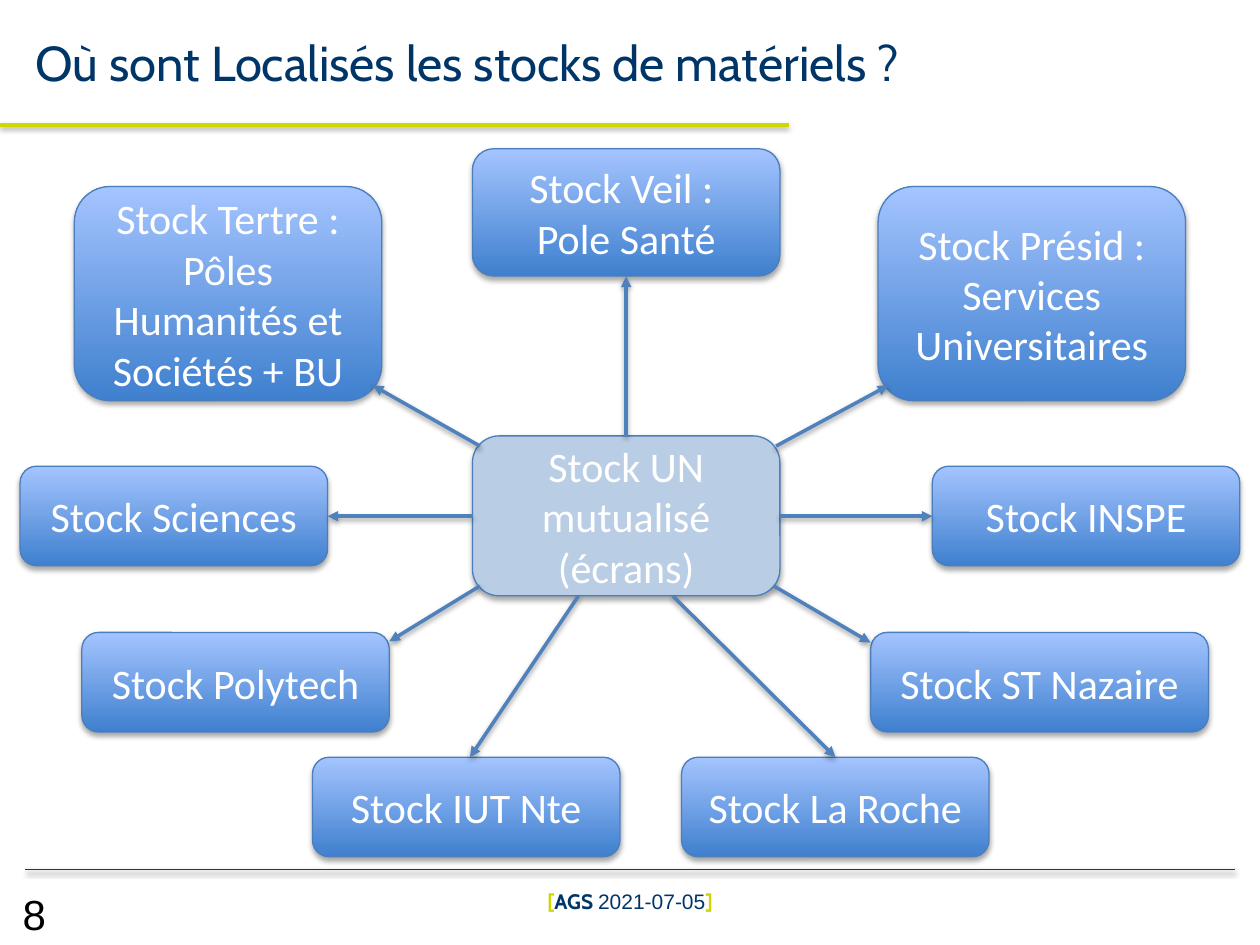
from typing import NamedTuple

from lxml import etree
from pptx import Presentation
from pptx.dml.color import RGBColor
from pptx.enum.shapes import MSO_CONNECTOR, MSO_SHAPE
from pptx.enum.text import MSO_ANCHOR, MSO_AUTO_SIZE, PP_ALIGN
from pptx.oxml.ns import qn
from pptx.util import Pt

ROUND = MSO_SHAPE.ROUNDED_RECTANGLE
LINE = MSO_CONNECTOR.STRAIGHT
TOP, MIDDLE = MSO_ANCHOR.TOP, MSO_ANCHOR.MIDDLE
LEFT, CENTER, JUSTIFY = PP_ALIGN.LEFT, PP_ALIGN.CENTER, PP_ALIGN.JUSTIFY
NO_FIT = MSO_AUTO_SIZE.NONE

NAVY, LIME, BLUE, EDGE = "003667", "D0D700", "4F81BD", "4B7EBC"
DARK, LIGHT, PALE = "3F80CE", "A4C4FF", "B9CDE5"
WIDE, LOW, TALL = 175.7, 56.9, 122.4


class Run(NamedTuple):
    text: str
    color: str
    font: str = "Cabin"
    bold: bool = False


class Stock(NamedTuple):
    name: str
    x: float
    y: float
    w: float = WIDE
    h: float = LOW
    fill: str = ""


class Arrow(NamedTuple):
    x1: float
    y1: float
    x2: float
    y2: float


STOCKS = [
    Stock("Stock Tertre : Pôles Humanités et Sociétés + BU", 42.5, 106.6, h=TALL),
    Stock("Stock Polytech", 46.8, 361.4),
    Stock("Stock Veil : \nPole Santé", 270, 85, h=72.7),
    Stock("Stock Présid : Services Universitaires", 501.8, 106.6, h=TALL),
    Stock("Stock UN mutualisé (écrans)", 270, 249.1, h=91.4, fill=PALE),
    Stock("Stock ST Nazaire", 497.5, 361.4, w=193),
    Stock("Stock Sciences", 11.5, 266.4),
    Stock("Stock IUT Nte", 178.6, 432.7),
    Stock("Stock La Roche", 389.5, 432.7),
    Stock("Stock INSPE", 532.8, 266.4),
]

ARROWS = [
    Arrow(357.8, 249.1, 357.8, 158),
    Arrow(445.7, 295, 532.8, 295),
    Arrow(270, 295, 187.2, 295),
    Arrow(274.3, 334.8, 222.5, 366.5),
    Arrow(274.3, 254.9, 213.1, 220.3),
    Arrow(443.5, 254.9, 507.6, 220.3),
    Arrow(384.5, 340.6, 477.4, 432.7),
    Arrow(330.5, 340.6, 268.6, 432.7),
    Arrow(442.1, 334.8, 497.5, 367.2),
]


def rgb(code: str) -> RGBColor:
    return RGBColor.from_string(code)


def shade(item, dist: float, alpha: int) -> None:
    """Add a soft shadow below an item whose fill and line are set."""
    props = item.element.spPr
    effects = etree.SubElement(props, qn("a:effectLst"))
    outer = etree.SubElement(
        effects, qn("a:outerShdw"), blurRad=str(Pt(3.15)), dist=str(Pt(dist)),
        dir="5400000", rotWithShape="0")
    black = etree.SubElement(outer, qn("a:srgbClr"), val="000000")
    etree.SubElement(black, qn("a:alpha"), val=str(alpha * 1000))


def write(shape, *rows: list[Run], size: float, align=LEFT, anchor=MIDDLE) -> None:
    frame = shape.text_frame
    frame.word_wrap = True
    frame.auto_size = NO_FIT
    frame.vertical_anchor = anchor
    for i, row in enumerate(rows):
        para = frame.add_paragraph() if i else frame.paragraphs[0]
        para.alignment = align
        for part in row:
            run = para.add_run()
            run.text = part.text
            font = run.font
            font.name, font.size, font.bold = part.font, Pt(size), part.bold
            font.color.rgb = rgb(part.color)


def draw_line(slide, path: Arrow, color: str, width: float, head: bool = False) -> None:
    line = slide.shapes.add_connector(LINE, *map(Pt, path))
    line.line.color.rgb = rgb(color)
    line.line.width = Pt(width)
    if head:
        stroke = line.element.spPr.find(qn("a:ln"))
        etree.SubElement(stroke, qn("a:tailEnd"), type="triangle")
    shade(line, 1.57, 38)


def draw_stock(slide, stock: Stock) -> None:
    box = slide.shapes.add_shape(ROUND, *map(Pt, stock[1:5]))
    if stock.fill:
        box.fill.solid()
        box.fill.fore_color.rgb = rgb(stock.fill)
    else:
        box.fill.gradient()
        box.fill.gradient_angle = 90
        for stop, color in zip(box.fill.gradient_stops, (DARK, LIGHT)):
            stop.color.rgb = rgb(color)
    box.line.color.rgb = rgb(EDGE)
    box.line.width = Pt(0.75)
    shade(box, 1.81, 35)
    rows = [[Run(row, "FFFFFF", "Calibri")] for row in stock.name.split("\n")]
    write(box, *rows, size=24, align=CENTER)


def main() -> None:
    deck = Presentation()
    deck.slide_width, deck.slide_height = Pt(720), Pt(540)
    slide = deck.slides.add_slide(deck.slide_layouts[5])

    draw_line(slide, Arrow(14.4, 496.8, 705.6, 496.8), "004080", 0.5)
    draw_line(slide, Arrow(0, 71.3, 450.7, 71.3), LIME, 2)

    title = slide.shapes.title
    title.left, title.top = Pt(13), Pt(0)
    title.width, title.height = Pt(633.6), Pt(71.3)
    write(title, [Run("Où sont Localisés les stocks de matériels ?", NAVY)],
          size=28, align=JUSTIFY)

    number = slide.shapes.add_textbox(Pt(5.8), Pt(504), Pt(68.4), Pt(21.6))
    write(number, [Run("8", "000000", "Arial")], size=24, anchor=TOP)

    footer = slide.shapes.add_textbox(Pt(0), Pt(500.4), Pt(720), Pt(28.8))
    write(footer, [
        Run("[", LIME, bold=True),
        Run("AGS ", NAVY, bold=True),
        Run("2021-07-05", NAVY, "Arial"),
        Run("]", LIME, bold=True),
    ], size=12, align=CENTER)

    for stock in STOCKS:
        draw_stock(slide, stock)
    for arrow in ARROWS:
        draw_line(slide, arrow, BLUE, 2, head=True)

    deck.save("out.pptx")


if __name__ == "__main__":
    main()
